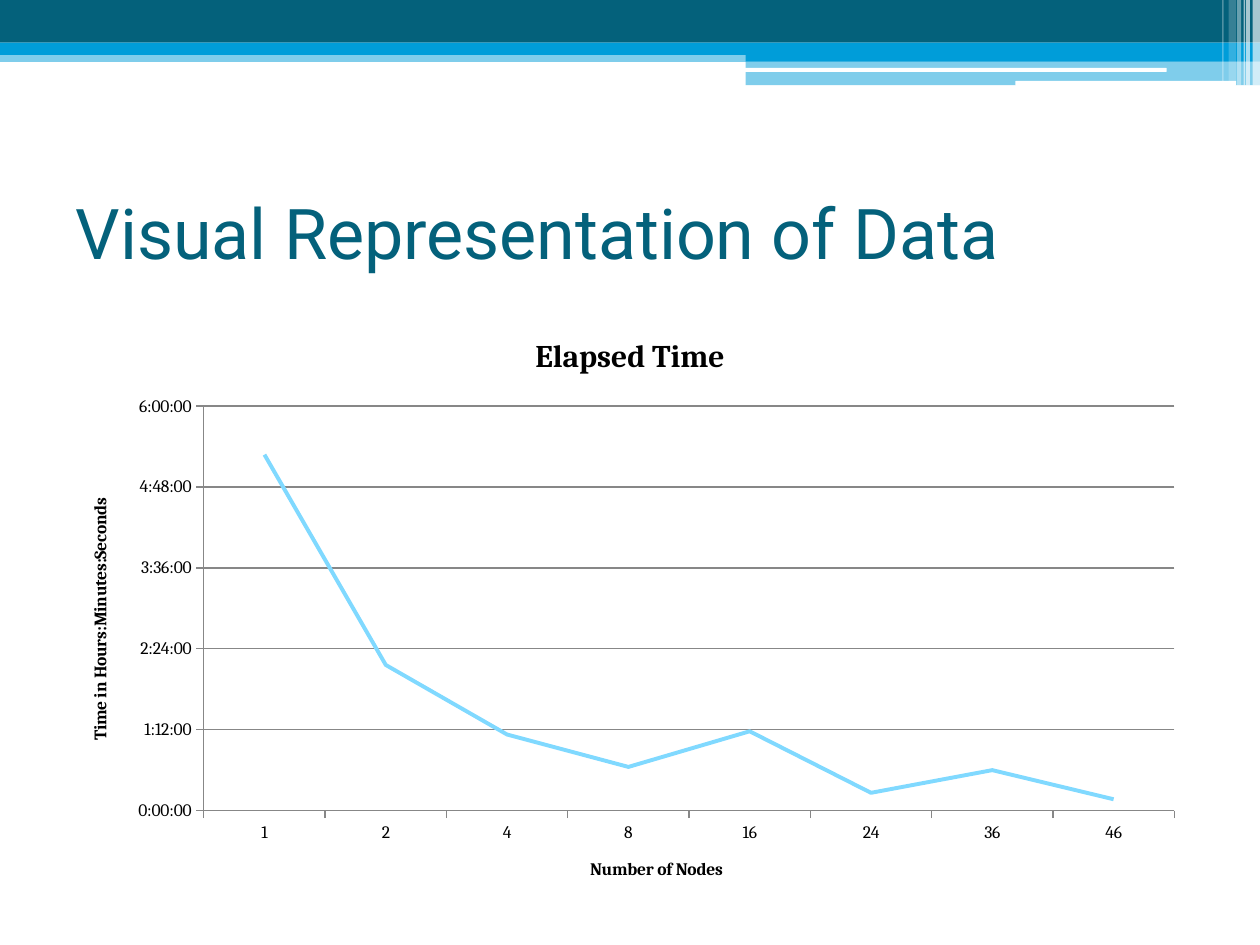
from pptx import Presentation
from pptx.chart.data import CategoryChartData
from pptx.dml.color import RGBColor
from pptx.enum.chart import XL_CHART_TYPE, XL_TICK_MARK
from pptx.enum.shapes import MSO_SHAPE
from pptx.enum.text import MSO_ANCHOR, PP_ALIGN
from pptx.oxml.ns import qn
from pptx.util import Cm, Pt

RECT, ROUNDED = MSO_SHAPE.RECTANGLE, MSO_SHAPE.ROUNDED_RECTANGLE
LINE_STACKED = XL_CHART_TYPE.LINE_STACKED
TICK_OUT = XL_TICK_MARK.OUTSIDE
LEFT, MIDDLE = PP_ALIGN.LEFT, MSO_ANCHOR.MIDDLE

TEAL = RGBColor(0x04, 0x61, 0x7B)
BLUE = RGBColor(0x00, 0x9D, 0xD9)
SKY = RGBColor(0x80, 0xD9, 0xFF)
GREY = RGBColor(0x87, 0x87, 0x87)
WHITE = RGBColor(0xFF, 0xFF, 0xFF)
BLACK = RGBColor(0, 0, 0)

# Header bands: left, top, width, height (cm), colour, opacity in percent
BANDS = [
    (0, 1.02, 25.4, 0.23, BLUE, 50),
    (0, 0, 25.4, 0.86, TEAL, 100),
    (0, 0.86, 25.4, 0.25, BLUE, 100),
    (15.03, 0.99, 10.37, 0.25, BLUE, 100),
    (15.03, 1.24, 10.37, 0.48, BLUE, 50),
]
# White rules cut into the bands: left, top, width, height
RULES = [(15.01, 1.37, 8.51, 0.08), (20.47, 1.63, 4.45, 0.1)]
# Vertical stripes at the right edge: left, width, height, opacity
STRIPES = [
    (25.25, 0.15, 1.73, 65),
    (25.12, 0.08, 1.73, 65),
    (25.07, 0.03, 1.73, 60),
    (24.94, 0.08, 1.73, 40),
    (24.77, 0.15, 1.63, 20),
    (24.64, 0.03, 1.63, 30),
]

NODES = ["1", "2", "4", "8", "16", "24", "36", "46"]
DAYS = [0.22, 0.09, 0.047, 0.027, 0.049, 0.011, 0.025, 0.007]


def write(tf, text, size, font, color, bold=False, align=None):
    p = tf.paragraphs[0]
    p.alignment = align
    r = p.add_run()
    r.text = text
    f = r.font
    f.size, f.name, f.bold = Pt(size), font, bold
    f.color.rgb = color


def add_bar(s, x, y, w, h, color, opacity=100, kind=RECT):
    sp = s.shapes.add_shape(kind, Cm(x), Cm(y), Cm(w), Cm(h))
    sp.shadow.inherit = False
    sp.line.fill.background()
    sp.fill.solid()
    sp.fill.fore_color.rgb = color
    if opacity < 100:
        clr = sp.fill._xPr.find(".//" + qn("a:srgbClr"))
        clr.makeelement(qn("a:alpha"))
        alpha = clr.makeelement(qn("a:alpha"), {"val": str(opacity * 1000)})
        clr.append(alpha)


def add_header(s):
    for band in BANDS:
        add_bar(s, *band)
    for rule in RULES:
        add_bar(s, *rule, WHITE, kind=ROUNDED)
    for x, w, h, opacity in STRIPES:
        add_bar(s, x, 0, w, h, WHITE, opacity)


def add_title(s, text):
    sp = s.shapes.title
    sp.left, sp.top, sp.width, sp.height = Cm(1.27), Cm(3.18), Cm(22.86), Cm(2.97)
    sp.text_frame.vertical_anchor = MIDDLE
    write(sp.text_frame, text, 40, "Roboto", TEAL, align=LEFT)


def format_line(line, color, width):
    line.color.rgb = color
    line.width = Pt(width)


def format_axis(axis, title):
    axis.major_tick_mark = TICK_OUT
    format_line(axis.format.line, GREY, 0.75)
    write(axis.axis_title.text_frame, title, 10, "Cambria", BLACK, bold=True)


def add_time_chart(s):
    data = CategoryChartData()
    data.categories = NODES
    data.add_series("Series 1", DAYS)
    chart = s.shapes.add_chart(
        LINE_STACKED, Cm(1.27), Cm(6.25), Cm(22.86), Cm(12.01), data).chart
    chart.has_legend = False
    chart.font.size, chart.font.name = Pt(10), "Cambria"
    chart.font.color.rgb = BLACK
    write(chart.chart_title.text_frame, "Elapsed Time", 18, "Cambria", BLACK, bold=True)

    format_axis(chart.category_axis, "Number of Nodes")
    values = chart.value_axis
    format_axis(values, "Time in Hours:Minutes:Seconds")
    values.minimum_scale, values.maximum_scale, values.major_unit = 0, 0.25, 0.05
    values.tick_labels.number_format = "h:mm:ss"
    values.tick_labels.number_format_is_linked = False
    format_line(values.major_gridlines.format.line, GREY, 0.75)

    plot = chart.plots[0]
    plot.vary_by_categories = False
    series = plot.series[0]
    series.smooth = False
    format_line(series.format.line, SKY, 2.25)


def main():
    prs = Presentation()
    prs.slide_width, prs.slide_height = Cm(25.4), Cm(19.05)
    s = prs.slides.add_slide(prs.slide_layouts[5])
    add_header(s)
    add_title(s, "Visual Representation of Data")
    add_time_chart(s)
    prs.save("out.pptx")


if __name__ == "__main__":
    main()
